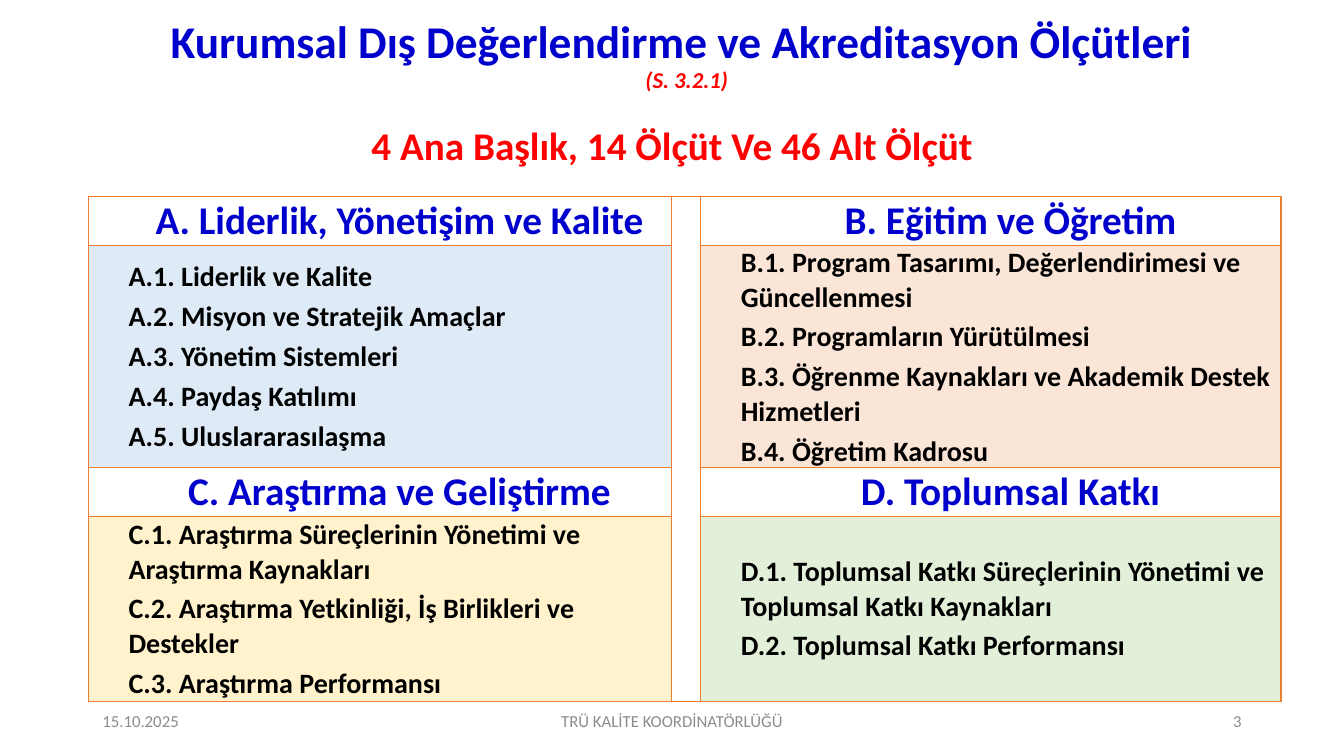
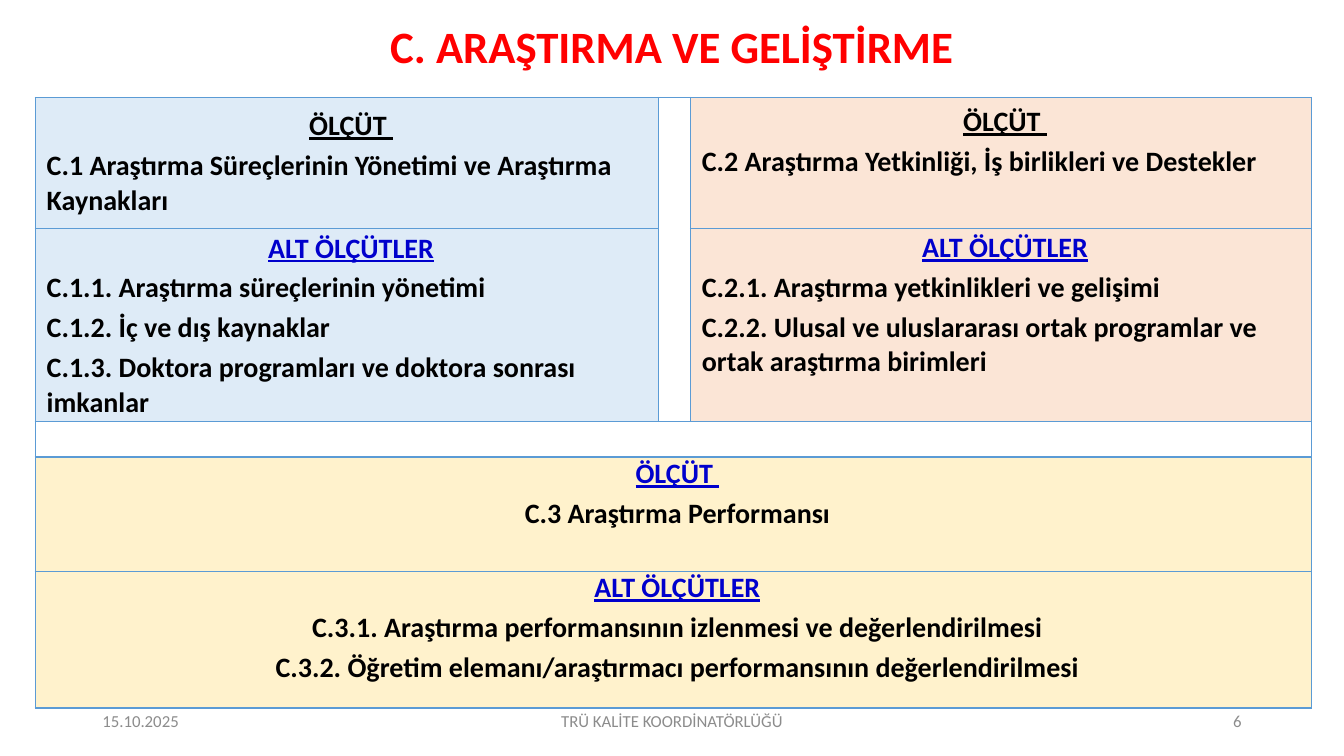
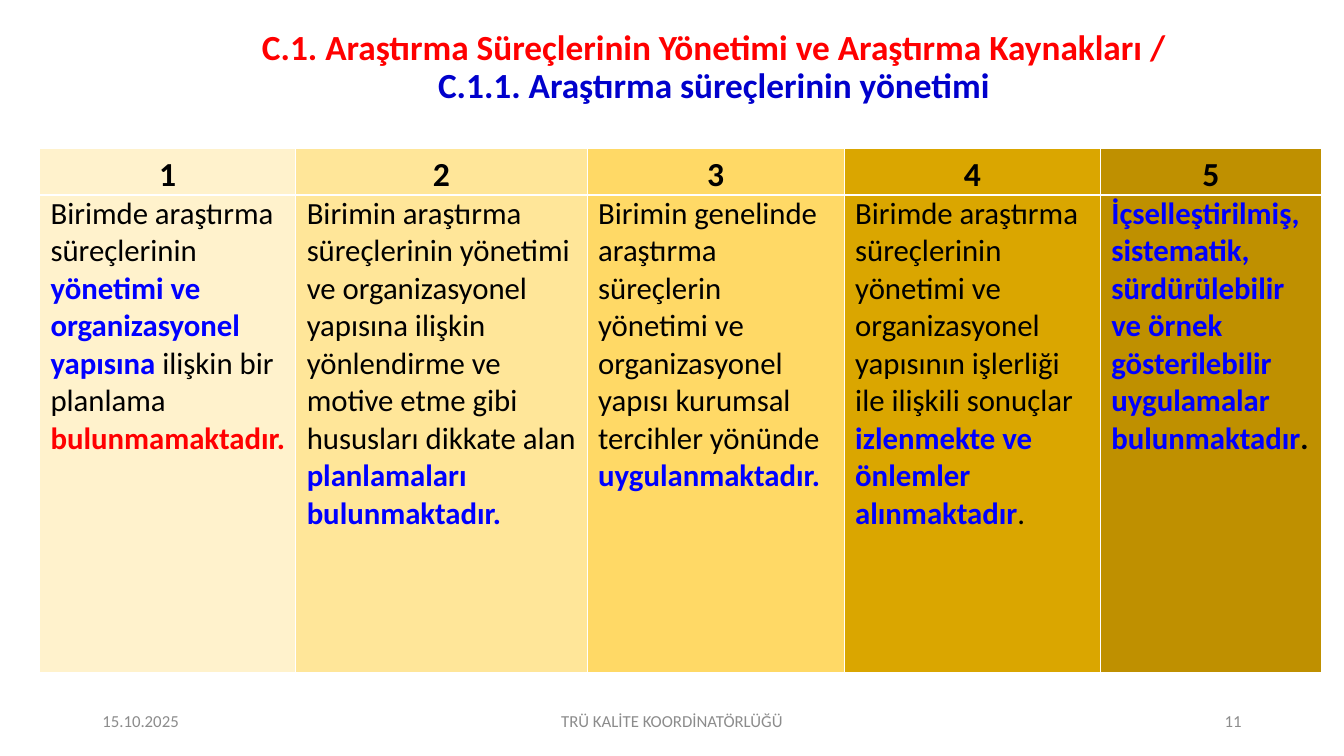
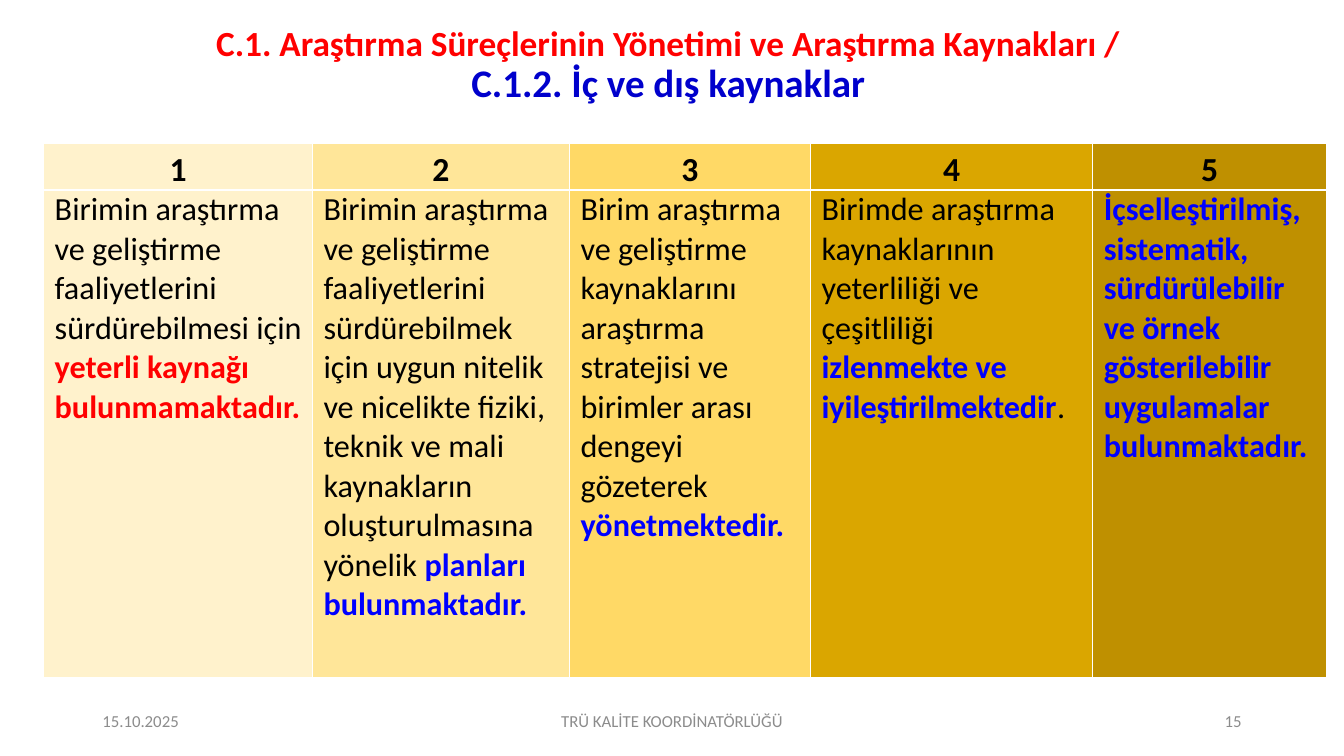
"""Builds four slides on institutional accreditation criteria."""
from dataclasses import dataclass, replace
from typing import Optional

from lxml import etree
from pptx import Presentation
from pptx import util as u
from pptx.dml.color import RGBColor
from pptx.enum import text
from pptx.oxml.ns import qn

COLUMNS, ROWS = 160, 90
SLIDE_WIDTH, SLIDE_HEIGHT = u.Inches(13.33), u.Inches(7.5)
LEFT, CENTER, RIGHT = text.PP_ALIGN.LEFT, text.PP_ALIGN.CENTER, text.PP_ALIGN.RIGHT
TOP, MIDDLE, BOTTOM = text.MSO_ANCHOR.TOP, text.MSO_ANCHOR.MIDDLE, text.MSO_ANCHOR.BOTTOM


@dataclass(frozen=True)
class Theme:
    """Colours and type sizes of the deck."""
    font: str = "Calibri"
    black: str = "000000"
    white: str = "FFFFFF"
    red: str = "FF0000"
    navy: str = "0000CC"
    blue: str = "0000FF"
    grey: str = "8C8C8C"
    orange_line: str = "ED7D31"
    blue_line: str = "5B9BD5"
    sky: str = "DEEBF7"
    peach: str = "FBE5D6"
    cream: str = "FFF2CC"
    mint: str = "E2F0D9"
    levels: tuple[str, ...] = ("FFF2CC", "FFE699", "FFD966", "DAA600", "BF9000")
    footer: float = 12
    body: float = 20
    level: float = 24
    heading: float = 28
    title: float = 32
    subtitle: float = 25.2


THEME = Theme()


@dataclass(frozen=True)
class Box:
    """A place in grid columns and rows."""
    column: float
    row: float
    width: float
    height: float


@dataclass(frozen=True)
class Run:
    """A stretch of text in one style."""
    words: str
    size: float = THEME.body
    color: str = THEME.black
    bold: bool = True
    italic: bool = False
    underline: bool = False


@dataclass(frozen=True)
class Para:
    """A paragraph of runs; indent is in grid columns, after in points."""
    runs: tuple[Run, ...]
    align: text.PP_ALIGN = LEFT
    indent: float = 0
    after: float = 0
    spacing: float = 1.0


@dataclass(frozen=True)
class Cell:
    """A table cell; side and top insets are in grid columns."""
    fill: str = THEME.white
    paras: tuple[Para, ...] = ()
    anchor: text.MSO_ANCHOR = MIDDLE
    side: float = 0
    top: float = 0
    down: int = 1
    across: int = 1


@dataclass(frozen=True)
class Grid:
    """A table with its place, track sizes and cells."""
    column: float
    row: float
    widths: tuple[float, ...]
    heights: tuple[float, ...]
    border: str
    cells: list[list[Optional[Cell]]]


@dataclass(frozen=True)
class Page:
    """One slide: title, table, page number and an optional banner."""
    number: int
    title_box: Box
    title: tuple[Run, ...]
    grid: Grid
    banner: Optional[Run] = None


def across(columns: float) -> int:
    """Turn grid columns into a length."""
    return round(SLIDE_WIDTH * columns / COLUMNS)


def down(rows: float) -> int:
    """Turn grid rows into a length."""
    return round(SLIDE_HEIGHT * rows / ROWS)


def write(frame, paras: tuple[Para, ...]) -> None:
    """Fill a text frame, breaking lines between runs that end in a newline."""
    for index, para in enumerate(paras):
        line = frame.add_paragraph() if index else frame.paragraphs[0]
        if para.indent:
            properties = line._p.get_or_add_pPr()
            properties.set("marL", str(across(para.indent)))
            properties.set("indent", "0")
        line.alignment = para.align
        line.line_spacing = para.spacing
        line.space_after = u.Pt(para.after)
        for part in para.runs:
            run = line.add_run()
            run.text = part.words.removesuffix("\n")
            font = run.font
            font.name, font.size = THEME.font, u.Pt(part.size)
            font.bold, font.italic = part.bold, part.italic
            font.underline = part.underline
            font.color.rgb = RGBColor.from_string(part.color)
            if part.words.endswith("\n"):
                line.add_line_break()


def add_text(slide, box: Box, para: Para, anchor: text.MSO_ANCHOR = MIDDLE) -> None:
    """Place one paragraph in a text box."""
    frame = slide.shapes.add_textbox(
        across(box.column), down(box.row), across(box.width), down(box.height)).text_frame
    frame.word_wrap = True
    frame.vertical_anchor = anchor
    write(frame, (para,))


def add_borders(cell, color: str) -> None:
    """Draw a one-point line on all four sides of a cell."""
    properties = cell._tc.get_or_add_tcPr()
    for index, side in enumerate(("lnL", "lnR", "lnT", "lnB")):
        line = etree.Element(qn(f"a:{side}"), w=str(u.Pt(1)))
        fill = etree.SubElement(line, qn("a:solidFill"))
        etree.SubElement(fill, qn("a:srgbClr"), val=color)
        properties.insert(index, line)


def add_grid(slide, grid: Grid) -> None:
    """Draw a table with merged cells, fills and borders."""
    table = slide.shapes.add_table(
        len(grid.heights), len(grid.widths), across(grid.column), down(grid.row),
        across(sum(grid.widths)), down(sum(grid.heights))).table
    table.first_row = table.horz_banding = False
    for column, width in zip(table.columns, grid.widths):
        column.width = across(width)
    for row, height in zip(table.rows, grid.heights):
        row.height = down(height)
    for r, row_cells in enumerate(grid.cells):
        for c, content in enumerate(row_cells):
            cell = table.cell(r, c)
            part = content or Cell()
            cell.fill.solid()
            cell.fill.fore_color.rgb = RGBColor.from_string(part.fill)
            add_borders(cell, grid.border)
            cell.margin_left = cell.margin_right = across(part.side)
            cell.margin_top, cell.margin_bottom = down(part.top), 0
            cell.vertical_anchor = part.anchor
            write(cell.text_frame, part.paras)
            if part.down * part.across > 1:
                cell.merge(table.cell(r + part.down - 1, c + part.across - 1))


def add_footer(slide, number: int) -> None:
    """Write the date, the office and the page number."""
    parts = ((11, 36, LEFT, "15.10.2025"),
             (53, 54, CENTER, "TRÜ KALİTE KOORDİNATÖRLÜĞÜ"),
             (113, 36, RIGHT, str(number)))
    for column, width, align, words in parts:
        run = Run(words, THEME.footer, THEME.grey, bold=False)
        add_text(slide, Box(column, 83.4, width, 4.8), Para((run,), align))


def add_page(deck, page: Page) -> None:
    """Add one slide."""
    slide = deck.slides.add_slide(deck.slide_layouts[6])
    add_text(slide, page.title_box, Para(page.title, CENTER, spacing=0.9))
    add_footer(slide, page.number)
    add_grid(slide, page.grid)
    if page.banner:
        add_text(slide, Box(0, 13.8, COLUMNS, 6.8), Para((page.banner,), CENTER), TOP)


def area_heading(words: str) -> Cell:
    """Make the heading cell of a main area."""
    run = Run(words, THEME.heading, THEME.navy)
    return Cell(paras=(Para((run,), CENTER, 4.7, 4),), side=0.1, top=0.1)


def area_list(fill: str, *items: str) -> Cell:
    """Make the cell that lists the criteria of a main area."""
    return Cell(fill, tuple(Para((Run(item),), LEFT, 4.7, 4) for item in items),
                side=0.1, top=0.1)


def criterion(fill: str, label: str, color: str, *items: str,
              align: text.PP_ALIGN = LEFT) -> Cell:
    """Make a cell with an underlined label above its items."""
    head = Para((Run(label, color=color, underline=True),), CENTER, 1, 4)
    body = tuple(Para((Run(item),), align, 1, 4) for item in items)
    return Cell(fill, (head, *body), side=0.36, top=0.1)


def full_row(label: str, *items: str) -> Cell:
    """Make a centred criterion that spans the whole table."""
    cell = criterion(THEME.cream, label, THEME.navy, *items, align=CENTER)
    return replace(cell, anchor=TOP, side=0, top=0, across=3)


def plain(words: str, size: float = THEME.body) -> Run:
    """Make a regular black run."""
    return Run(words, bold=False)


def strong(words: str) -> Run:
    """Make a bold blue run."""
    return Run(words, color=THEME.blue)


def lacking(words: str) -> Run:
    """Make a bold red run."""
    return Run(words, color=THEME.red)


def rating_grid(column: float, row: float, widths: tuple[float, ...], body_height: float,
                size: float, after: float, levels: list[tuple[Run, ...]]) -> Grid:
    """Make the table of the five maturity levels."""
    heads, bodies = [], []
    for number, (fill, runs) in enumerate(zip(THEME.levels, levels), 1):
        label = Para((Run(str(number), THEME.level),), CENTER, spacing=1.15)
        heads.append(Cell(fill, (label,), BOTTOM, side=0.84))
        sized = tuple(replace(run, size=size) for run in runs)
        bodies.append(Cell(fill, (Para(sized, LEFT, 0.48, after),), TOP, side=0.84))
    return Grid(column, row, widths, (5.5, body_height), THEME.white, [heads, bodies])


def main_areas() -> Page:
    """Describe the slide of the four main areas."""
    cells = [
        [area_heading("A. Liderlik, Yönetişim ve Kalite"), Cell(down=4),
         area_heading("B. Eğitim ve Öğretim")],
        [area_list(THEME.sky, "A.1. Liderlik ve Kalite", "A.2. Misyon ve Stratejik Amaçlar",
                   "A.3. Yönetim Sistemleri", "A.4. Paydaş Katılımı",
                   "A.5. Uluslararasılaşma"), None,
         area_list(THEME.peach, "B.1. Program Tasarımı, Değerlendirimesi ve Güncellenmesi",
                   "B.2. Programların Yürütülmesi",
                   "B.3. Öğrenme Kaynakları ve Akademik Destek Hizmetleri",
                   "B.4. Öğretim Kadrosu")],
        [area_heading("C. Araştırma ve Geliştirme"), None,
         area_heading("D. Toplumsal Katkı")],
        [area_list(THEME.cream,
                   "C.1. Araştırma Süreçlerinin Yönetimi ve Araştırma Kaynakları",
                   "C.2. Araştırma Yetkinliği, İş Birlikleri ve Destekler",
                   "C.3. Araştırma Performansı"), None,
         area_list(THEME.mint,
                   "D.1. Toplumsal Katkı Süreçlerinin Yönetimi ve Toplumsal Katkı Kaynakları",
                   "D.2. Toplumsal Katkı Performansı")],
    ]
    title = (Run("Kurumsal Dış Değerlendirme ve Akreditasyon Ölçütleri \n", 32.4, THEME.navy),
             Run("(S. 3.2.1)", 16.2, THEME.red, italic=True))
    grid = Grid(10.5, 23.4, (69.4, 3.5, 69.1), (5.8, 26.5, 5.8, 22), THEME.orange_line, cells)
    return Page(3, Box(3.5, 2.2, 156.5, 9), title, grid,
                Run("4 Ana Başlık, 14 Ölçüt Ve 46 Alt Ölçüt", THEME.heading, THEME.red))


def research_criteria() -> Page:
    """Describe the slide of the research criteria."""
    main_label, sub_label = "ÖLÇÜT ", "ALT ÖLÇÜTLER"
    cells = [
        [criterion(THEME.sky, main_label, THEME.black,
                   "C.1 Araştırma Süreçlerinin Yönetimi ve Araştırma Kaynakları"),
         Cell(down=2),
         replace(criterion(THEME.peach, main_label, THEME.black,
                           "C.2 Araştırma Yetkinliği, İş birlikleri ve Destekler"),
                 anchor=TOP, top=0.9)],
        [criterion(THEME.sky, sub_label, THEME.navy,
                   "C.1.1. Araştırma süreçlerinin yönetimi", "C.1.2. İç ve dış kaynaklar",
                   "C.1.3. Doktora programları ve doktora sonrası imkanlar"), None,
         replace(criterion(THEME.peach, sub_label, THEME.navy,
                           "C.2.1. Araştırma yetkinlikleri ve gelişimi",
                           "C.2.2. Ulusal ve uluslararası ortak programlar ve "
                           "ortak araştırma birimleri"), anchor=TOP, top=0.3)],
        [Cell(across=3), None, None],
        [full_row(main_label, "C.3 Araştırma Performansı"), None, None],
        [full_row(sub_label,
                  "C.3.1. Araştırma performansının izlenmesi ve değerlendirilmesi",
                  "C.3.2. Öğretim elemanı/araştırmacı performansının değerlendirilmesi"),
         None, None],
    ]
    grid = Grid(4.2, 11.6, (74.2, 3.8, 73.9), (15.6, 23, 4.2, 13.6, 16.3),
                THEME.blue_line, cells)
    title = (Run("C. ARAŞTIRMA VE GELİŞTİRME", THEME.title, THEME.red),)
    return Page(6, Box(0, 1.6, COLUMNS, 8.5), title, grid)


def rating_pages() -> list[Page]:
    """Describe the two slides of maturity levels."""
    section = Run("C.1. Araştırma Süreçlerinin Yönetimi ve Araştırma Kaynakları /\n",
                  THEME.subtitle, THEME.red)
    exemplary = ("İçselleştirilmiş, sistematik, sürdürülebilir ve örnek gösterilebilir "
                 "uygulamalar bulunmaktadır")
    management = [
        (plain("Birimde araştırma süreçlerinin "),
         strong("yönetimi ve organizasyonel yapısına "),
         plain("ilişkin bir planlama "), lacking("bulunmamaktadır.")),
        (plain("Birimin araştırma süreçlerinin yönetimi ve organizasyonel yapısına ilişkin "
               "yönlendirme ve motive etme gibi hususları dikkate alan "),
         strong("planlamaları bulunmaktadır.")),
        (plain("Birimin genelinde araştırma süreçlerin yönetimi ve organizasyonel yapısı "
               "kurumsal tercihler yönünde "), strong("uygulanmaktadır.")),
        (plain("Birimde araştırma süreçlerinin yönetimi ve organizasyonel yapısının işlerliği "
               "ile ilişkili sonuçlar "),
         strong("izlenmekte ve önlemler alınmaktadır"), plain(".")),
        (strong(exemplary), Run(".")),
    ]
    resources = [
        (plain("Birimin araştırma ve geliştirme faaliyetlerini sürdürebilmesi için "),
         lacking("yeterli kaynağı bulunmamaktadır.")),
        (plain("Birimin araştırma ve geliştirme faaliyetlerini sürdürebilmek için uygun nitelik "
               "ve nicelikte fiziki, teknik ve mali kaynakların oluşturulmasına yönelik "),
         strong("planları bulunmaktadır.")),
        (plain("Birim araştırma ve geliştirme kaynaklarını araştırma stratejisi ve birimler "
               "arası dengeyi gözeterek "), strong("yönetmektedir.")),
        (plain("Birimde araştırma kaynaklarının yeterliliği ve çeşitliliği "),
         strong("izlenmekte ve iyileştirilmektedir"), plain(".")),
        (strong(exemplary + "."),),
    ]
    return [
        Page(11, Box(11, 2.8, 148, 10.7),
             (section, Run("C.1.1. Araştırma süreçlerinin yönetimi", THEME.subtitle,
                           THEME.navy)),
             rating_grid(4.7, 17.7, (30.5, 34.7, 30.6, 30.5, 26.3), 56.8, 22, 4, management)),
        Page(15, Box(0, 2.4, 159.1, 10.9),
             (section, Run("C.1.2. İç ve dış kaynaklar", 27.9, THEME.navy)),
             rating_grid(5.2, 17.1, (32, 30.6, 28.7, 33.6, 27.8), 58.1, 23, 0, resources)),
    ]


def main() -> None:
    """Build and save the deck."""
    deck = Presentation()
    deck.slide_width, deck.slide_height = SLIDE_WIDTH, SLIDE_HEIGHT
    for page in (main_areas(), research_criteria(), *rating_pages()):
        add_page(deck, page)
    deck.save("out.pptx")


if __name__ == "__main__":
    main()
